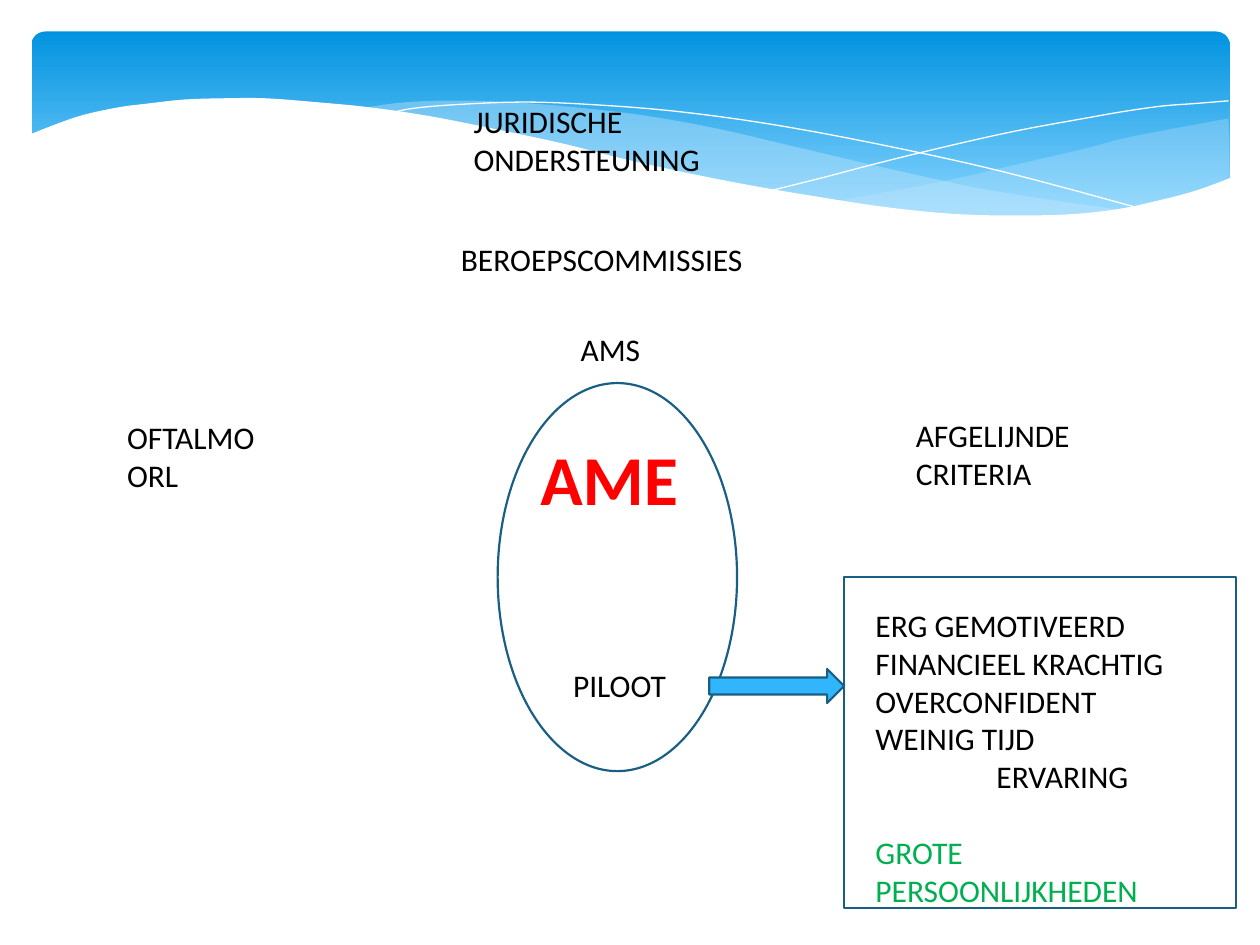
import pptx
import pptx.util
import pptx.dml.color
import pptx.enum.shapes
import pptx.oxml
import pptx.oxml.ns

Inches = pptx.util.Inches
SHAPE = pptx.enum.shapes.MSO_SHAPE
OUTLINE = "195F84"

BACK_WAVES = [
    (29, [
        [(9.75, 0.94), (9.48, 0.99), (9.21, 1.04), (8.91, 1.1), (8.61, 1.18),
         (8.05, 1.31), (7.53, 1.43), (7.06, 1.52), (6.61, 1.6)],
        [(6.61, 1.6), (7.05, 1.65), (7.45, 1.69), (7.81, 1.72), (8.14, 1.72),
         (8.44, 1.71), (8.72, 1.69), (8.97, 1.65), (9.21, 1.6), (9.49, 1.52), (9.76, 1.41)],
    ]),
    (40, [
        [(8.93, 1.67), (8.37, 1.59), (7.75, 1.49), (7.06, 1.34), (6.29, 1.16),
         (5.69, 1.02), (5.14, 0.92), (4.65, 0.86), (4.2, 0.82), (3.8, 0.8),
         (3.44, 0.8), (3.13, 0.82), (2.86, 0.86)],
        [(2.86, 0.86), (3.23, 0.9), (3.62, 0.97), (4.04, 1.06), (4.49, 1.16),
         (5.3, 1.35), (6.01, 1.5), (6.65, 1.61), (7.22, 1.68), (7.73, 1.72),
         (8.18, 1.73), (8.57, 1.71), (8.93, 1.67)],
    ]),
]
WAVE_LINES = [
    [(3.09, 0.9), (3.28, 0.86), (3.63, 0.83), (4.16, 0.81), (4.69, 0.83), (5.33, 0.88),
     (6.08, 0.98), (6.95, 1.14), (7.95, 1.36), (9.07, 1.66)],
    [(6.13, 1.51), (6.53, 1.41), (6.95, 1.3), (7.48, 1.17), (8.06, 1.04), (8.66, 0.93),
     (8.95, 0.88), (9.24, 0.84), (9.51, 0.82), (9.75, 0.8)],
]
FRONT_WAVE = [
    [(9.77, 1.41), (9.5, 1.51), (9.2, 1.59), (8.87, 1.66), (8.5, 1.7), (8.09, 1.71),
     (7.61, 1.7), (7.08, 1.65), (6.48, 1.56), (5.79, 1.44), (5.03, 1.28), (4.47, 1.14),
     (3.91, 1.02), (3.4, 0.92), (2.92, 0.85), (2.5, 0.81), (2.11, 0.78), (1.77, 0.78),
     (1.46, 0.79), (1.19, 0.82), (0.95, 0.85), (0.67, 0.91), (0.46, 0.98), (0.23, 1.07)],
    [(0.23, 2.24), (9.77, 2.24)],
]
LABELS = [
    (["AME"], 4.19, 3.41, 1.34, 0.77, False),
    (["OFTALMO", "ORL"], 0.91, 3.27, 1.29, 0.71, False),
    (["AFGELIJNDE CRITERIA"], 7.17, 3.25, 1.97, 0.71, True),
    (["AMS"], 4.51, 2.57, 0.7, 0.4, False),
    (["BEROEPSCOMMISSIES"], 3.56, 1.86, 2.6, 0.4, True),
    (["JURIDISCHE ONDERSTEUNING"], 3.66, 0.76, 3.15, 0.71, True),
    (["PILOOT"], 4.45, 5.24, 1.4, 0.4, True),
]
PILOT_TRAITS = ["ERG GEMOTIVEERD", "FINANCIEEL KRACHTIG", "OVERCONFIDENT", "WEINIG TIJD",
                "ERVARING", "GROTE PERSOONLIJKHEDEN"]


def rgb(color):
    return pptx.dml.color.RGBColor.from_string(color)


def smooth(points, steps=4):
    ends = [points[0], *points, points[-1]]
    curve = [points[0]]
    for a, b, c, d in zip(ends, ends[1:], ends[2:], ends[3:]):
        for t in (i / steps for i in range(1, steps + 1)):
            curve.append(tuple(
                (2 * q + (r - p) * t + (2 * p - 5 * q + 4 * r - w) * t ** 2
                 + (3 * q - p - 3 * r + w) * t ** 3) / 2
                for p, q, r, w in zip(a, b, c, d)))
    return curve


def paint(sp, fill=None, line=None, width=1.25, alpha=None):
    sp.shadow.inherit = False
    if fill:
        sp.fill.solid()
        sp.fill.fore_color.rgb = rgb(fill)
    else:
        sp.fill.background()
    if alpha:
        clr = sp.fill._xPr.find(".//" + pptx.oxml.ns.qn("a:srgbClr"))
        clr.append(pptx.oxml.parse_xml(
            f'<a:alpha {pptx.oxml.ns.nsdecls("a")} val="{alpha * 1000}"/>'))
    if line:
        sp.line.color.rgb = rgb(line)
        sp.line.width = pptx.util.Pt(width)
    else:
        sp.line.fill.background()


def add_wave(s, curves, close=True, **style):
    points = [(Inches(x), Inches(y)) for curve in curves for x, y in smooth(curve)]
    builder = s.shapes.build_freeform(*points[0])
    builder.add_line_segments(points[1:], close=close)
    paint(builder.convert_to_shape(), **style)


def add_shape(s, kind, *box, **style):
    sp = s.shapes.add_shape(kind, *map(Inches, box))
    paint(sp, **style)
    return sp


def add_text(s, lines, *box, wrap=True):
    tf = s.shapes.add_textbox(*map(Inches, box)).text_frame
    tf.word_wrap = wrap
    tf.text = "\n".join(lines)
    for p in tf.paragraphs:
        p.font.name = "Calibri"
        p.font.size = pptx.util.Pt(18)
        p.font.color.rgb = rgb("000000")
    return tf.paragraphs


prs = pptx.Presentation()
prs.slide_width, prs.slide_height = Inches(10), Inches(7.5)
s = prs.slides.add_slide(prs.slide_layouts[6])

banner = add_shape(s, SHAPE.ROUNDED_RECTANGLE, 0.25, 0.25, 9.51, 1.56)
banner.adjustments[0] = 0.07
banner.fill.gradient()
banner.fill.gradient_angle = 270
for stop, color, position in zip(banner.fill.gradient_stops, ("0293E0", "83D3FE"), (0, 0.9)):
    stop.color.rgb = rgb(color)
    stop.position = position

for alpha, curves in BACK_WAVES:
    add_wave(s, curves, fill="C6E7FC", alpha=alpha)
for curve in WAVE_LINES:
    add_wave(s, [curve], close=False, line="FFFFFF", width=0)
add_wave(s, FRONT_WAVE, fill="FFFFFF")

for lines, *box, wrap in LABELS:
    paragraphs = add_text(s, lines, *box, wrap=wrap)
    if lines == ["AME"]:
        font = paragraphs[0].font
        font.size = pptx.util.Pt(40)
        font.bold = True
        font.color.rgb = rgb("FF0000")

add_shape(s, SHAPE.OVAL, 3.95, 3.04, 1.9, 3.08, line=OUTLINE)
add_shape(s, SHAPE.RIGHT_ARROW, 5.63, 5.31, 1.07, 0.27, fill="31B6FD", line=OUTLINE)

*_, experience, personality = add_text(s, PILOT_TRAITS, 6.85, 4.76, 2.76, 2.52)
experience._p.get_or_add_pPr().set("marL", str(Inches(0.96)))
personality.space_before = pptx.util.Pt(22)
personality.font.color.rgb = rgb("00B050")
add_shape(s, SHAPE.RECTANGLE, 6.7, 4.58, 3.11, 2.63, line=OUTLINE)

prs.save("out.pptx")
